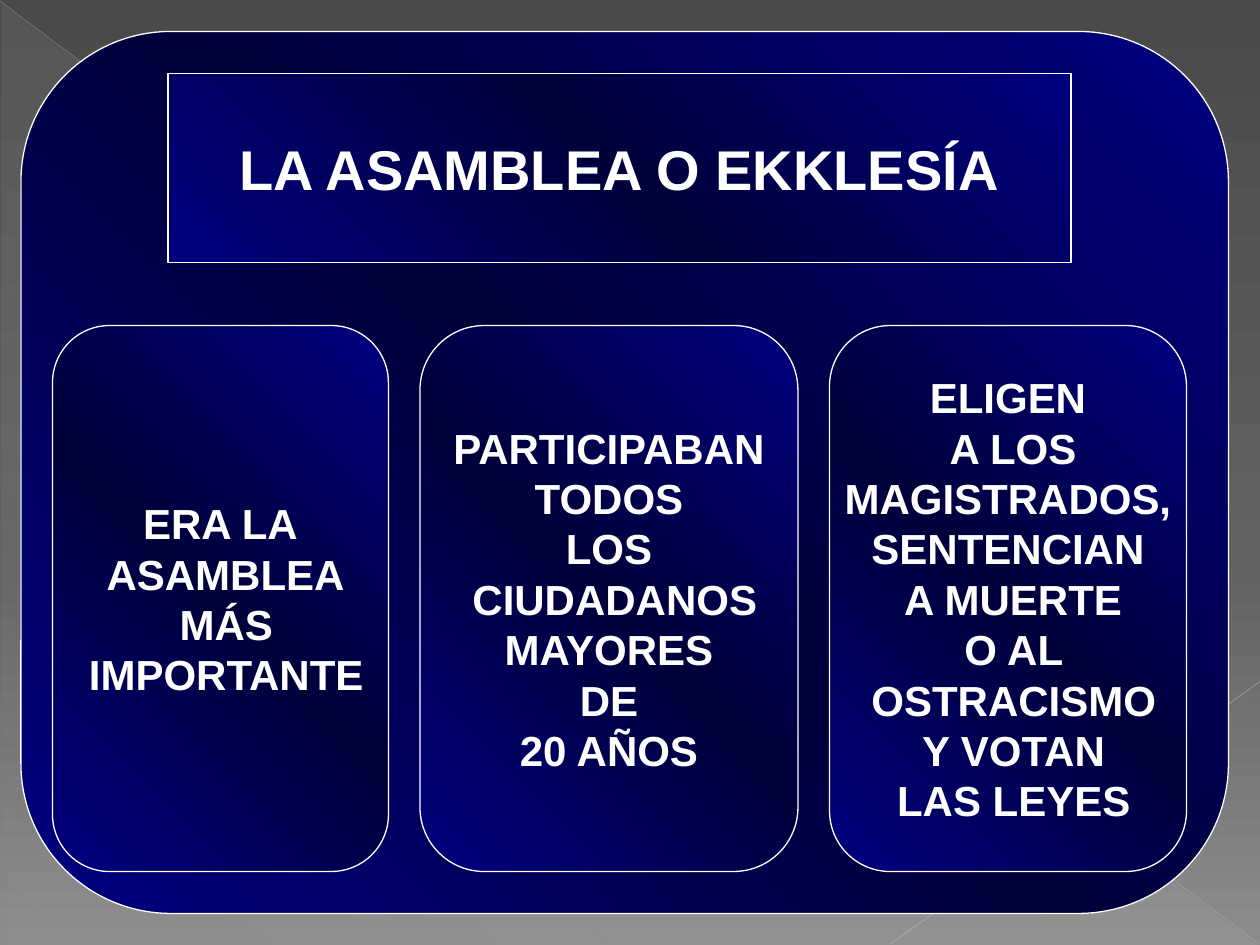
import copy
from dataclasses import dataclass

import lxml.etree
import pptx
import pptx.dml.color
import pptx.enum.shapes
import pptx.enum.text
import pptx.oxml.ns
import pptx.util

Pt = pptx.util.Pt
qn = pptx.oxml.ns.qn


@dataclass(frozen=True)
class Stop:
    position: int
    color: str
    opacity: int = 100


@dataclass(frozen=True)
class Gradient:
    stops: tuple[Stop, ...]
    angle: int


@dataclass(frozen=True)
class Theme:
    font: str = "Arial"
    title_size: float = 32
    body_size: float = 24
    white: str = "FFFFFF"
    outline: float = 0.75
    corner: float = 0.17
    background: Gradient = Gradient(
        (Stop(0, "4A4A4A"), Stop(60, "626262"), Stop(100, "8C8C8C")), 90)
    glow: Gradient = Gradient(
        (Stop(0, "D2D2D2", 10), Stop(70, "D2D2D2", 8), Stop(100, "D2D2D2", 1)), 133)
    panel: Gradient = Gradient(
        (Stop(0, "000080"), Stop(50, "00003B"), Stop(100, "000080")), 315)


@dataclass(frozen=True)
class Area:
    left: float
    top: float
    width: float
    height: float


@dataclass(frozen=True)
class Column:
    width: float
    lines: tuple[str, ...]


@dataclass(frozen=True)
class Ray:
    start: tuple[float, float]
    end: tuple[float, float]
    color: str
    width: float
    opacity: int


THEME = Theme()
FRAME = Area(12, 18, 690, 504)
TITLE = Area(96, 42, 516, 108)
COLUMNS_LEFT, COLUMNS_TOP, COLUMNS_HEIGHT, COLUMN_GAP = 30, 186, 312, 18
COLUMNS = (
    Column(192, ("ERA LA", " ASAMBLEA", " MÁS", " IMPORTANTE")),
    Column(216, ("PARTICIPABAN", "TODOS", "LOS", " CIUDADANOS", "MAYORES", "DE",
                 "20 AÑOS")),
    Column(204, ("ELIGEN", " A LOS", " MAGISTRADOS, ", "SENTENCIAN", " A MUERTE",
                 " O AL", " OSTRACISMO", " Y VOTAN", " LAS LEYES")),
)
RAYS = (
    Ray((0, 0.7), (719.3, 539.3), "BFBFBF", 0.39, 35),
    Ray((720, 389.5), (509, 539.3), "C6C6C6", 0.47, 45),
)


def rgb(color: str) -> pptx.dml.color.RGBColor:
    return pptx.dml.color.RGBColor.from_string(color)


def set_opacity(color_element, opacity: int) -> None:
    if opacity < 100:
        lxml.etree.SubElement(color_element, qn("a:alpha"), val=str(opacity * 1000))


def paint(fill, owner, gradient: Gradient) -> None:
    fill.gradient()
    fill.gradient_angle = (360 - gradient.angle) % 360
    stop_list = next(owner.iter(qn("a:gsLst")))
    for old_stop in list(stop_list):
        stop_list.remove(old_stop)
    for stop in gradient.stops:
        entry = lxml.etree.SubElement(stop_list, qn("a:gs"), pos=str(stop.position * 1000))
        color = lxml.etree.SubElement(entry, qn("a:srgbClr"), val=stop.color)
        set_opacity(color, stop.opacity)


def place(box, area: Area) -> None:
    box.left, box.top = Pt(area.left), Pt(area.top)
    box.width, box.height = Pt(area.width), Pt(area.height)


def style_panel(box) -> None:
    paint(box.fill, box.element, THEME.panel)
    box.line.color.rgb = rgb(THEME.white)
    box.line.width = Pt(THEME.outline)


def add_panel(page, area: Area):
    box = page.shapes.add_shape(
        pptx.enum.shapes.MSO_SHAPE.ROUNDED_RECTANGLE,
        Pt(area.left), Pt(area.top), Pt(area.width), Pt(area.height))
    box.adjustments[0] = THEME.corner
    box.shadow.inherit = False
    style_panel(box)
    return box


def write_lines(box, lines: tuple[str, ...], size: float) -> None:
    frame = box.text_frame
    frame.word_wrap = False
    frame.auto_size = pptx.enum.text.MSO_AUTO_SIZE.NONE
    frame.vertical_anchor = pptx.enum.text.MSO_ANCHOR.MIDDLE
    for index, line in enumerate(lines):
        para = frame.add_paragraph() if index else frame.paragraphs[0]
        para.alignment = pptx.enum.text.PP_ALIGN.CENTER
        span = para.add_run()
        span.text = line
        span.font.name = THEME.font
        span.font.size = Pt(size)
        span.font.bold = True
        span.font.color.rgb = rgb(THEME.white)


def add_title(page, outline_source) -> None:
    title = page.shapes.title
    place(title, TITLE)
    geometry = outline_source.element.spPr.find(qn("a:prstGeom"))
    title.element.spPr.insert(1, copy.deepcopy(geometry))
    style_panel(title)
    write_lines(title, ("LA ASAMBLEA O EKKLESÍA",), THEME.title_size)
    outline_source.element.addnext(title.element)


def add_ray(page, ray: Ray) -> None:
    connector = page.shapes.add_connector(
        pptx.enum.shapes.MSO_CONNECTOR.STRAIGHT,
        *map(Pt, ray.start), *map(Pt, ray.end))
    connector.line.color.rgb = rgb(ray.color)
    connector.line.width = Pt(ray.width)
    properties = connector.element.spPr
    set_opacity(next(properties.iter(qn("a:srgbClr"))), ray.opacity)
    lxml.etree.SubElement(properties, qn("a:effectLst"))


def add_backdrop(page) -> None:
    paint(page.background.fill, page.element, THEME.background)
    glow = page.shapes.add_shape(
        pptx.enum.shapes.MSO_SHAPE.RIGHT_TRIANGLE, Pt(0.7), Pt(1.4), Pt(718.6), Pt(538.6))
    glow.shadow.inherit = False
    paint(glow.fill, glow.element, THEME.glow)
    glow.line.fill.background()
    for ray in RAYS:
        add_ray(page, ray)


def main() -> None:
    deck = pptx.Presentation()
    deck.slide_width, deck.slide_height = Pt(720), Pt(540)
    page = deck.slides.add_slide(deck.slide_layouts.get_by_name("Title Only"))
    add_backdrop(page)
    add_title(page, add_panel(page, FRAME))
    left = COLUMNS_LEFT
    for column in COLUMNS:
        box = add_panel(page, Area(left, COLUMNS_TOP, column.width, COLUMNS_HEIGHT))
        write_lines(box, column.lines, THEME.body_size)
        left += column.width + COLUMN_GAP
    deck.save("out.pptx")


if __name__ == "__main__":
    main()
